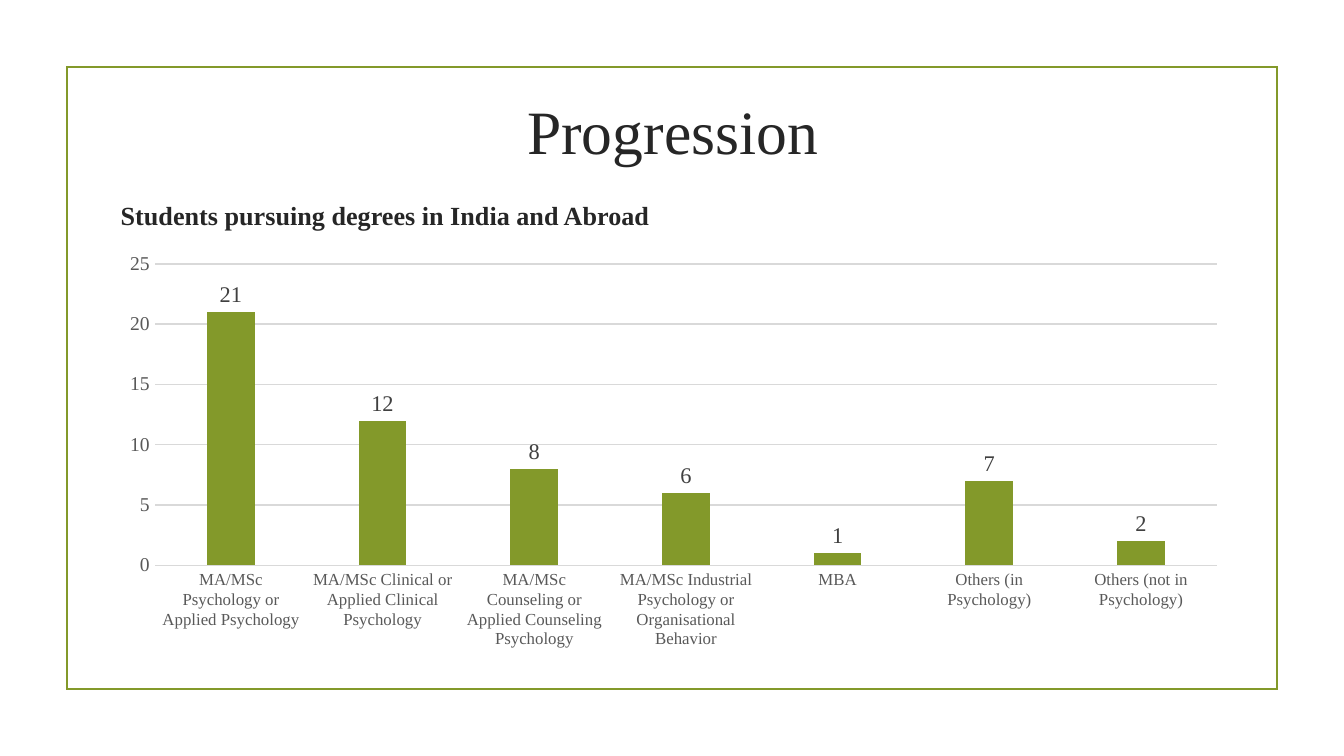
from dataclasses import dataclass

from lxml.etree import SubElement as Sub
from pptx import Presentation
from pptx.chart.data import CategoryChartData as Data
from pptx.dml.color import RGBColor as Rgb
from pptx.enum.chart import XL_CHART_TYPE as Kind, XL_LABEL_POSITION as Spot, XL_TICK_MARK as Tick
from pptx.enum.shapes import MSO_SHAPE as Form
from pptx.enum.text import MSO_ANCHOR as Anchor, PP_ALIGN as Align
from pptx.oxml.ns import qn
from pptx.util import Inches, Pt

COLS, ROWS = 100, 56.25
CELL = Inches(0.1)
FACE = "Times New Roman"
GREEN, INK, GRAY, RULE = "83992A", "262626", "595959", "D9D9D9"
COUNTS = {
    "MA/MSc Psychology or Applied Psychology": 21,
    "MA/MSc Clinical or Applied Clinical Psychology": 12,
    "MA/MSc Counseling or Applied Counseling Psychology": 8,
    "MA/MSc Industrial Psychology or Organisational Behavior": 6,
    "MBA": 1,
    "Others (in Psychology)": 7,
    "Others (not in Psychology)": 2,
}


@dataclass
class Box:
    col: float
    row: float
    wide: float
    high: float

    def area(self) -> list[int]:
        return [round(n * CELL) for n in (self.col, self.row, self.wide, self.high)]


@dataclass
class Label:
    text: str
    box: Box
    size: float
    bold: bool
    align: Align


LABELS = [
    Label("Progression", Box(5, 5.9, 90.1, 6.9), 33, False, Align.CENTER),
    Label("Students pursuing degrees in India and Abroad",
          Box(8, 13.85, 84.3, 4.4), 14, True, Align.LEFT),
]


def paint(part, tone: str) -> None:
    part.solid()
    part.fore_color.rgb = Rgb.from_string(tone)


def style(font, size: float, tone: str, bold: bool = False) -> None:
    font.name, font.size, font.bold = FACE, Pt(size), bold
    paint(font.fill, tone)


def rule(line, tone: str, width: float) -> None:
    paint(line.fill, tone)
    line.width = Pt(width)


def add_frame(slide, box: Box) -> None:
    frame = slide.shapes.add_shape(Form.RECTANGLE, *box.area())
    frame.shadow.inherit = False
    frame.fill.background()
    rule(frame.line, GREEN, 1.25)
    edge = frame.element.spPr.find(qn("a:ln"))
    Sub(edge, qn("a:miter"), lim="800000")


def add_label(slide, label: Label) -> None:
    text = slide.shapes.add_textbox(*label.box.area()).text_frame
    text.word_wrap = True
    text.vertical_anchor = Anchor.TOP
    text.margin_left = text.margin_right = text.margin_top = text.margin_bottom = CELL
    text.text = label.text
    line = text.paragraphs[0]
    line.alignment = label.align
    style(line.runs[0].font, label.size, INK, label.bold)


def add_bars(slide, box: Box) -> None:
    data = Data()
    data.categories = list(COUNTS)
    data.add_series("Series 1", list(COUNTS.values()))
    chart = slide.shapes.add_chart(Kind.COLUMN_CLUSTERED, *box.area(), data).chart
    chart.has_title = chart.has_legend = False
    style(chart.font, 10, "000000")

    for axis, size in ((chart.category_axis, 9), (chart.value_axis, 10.5)):
        axis.major_tick_mark = axis.minor_tick_mark = Tick.NONE
        style(axis.tick_labels.font, size, GRAY)
    rule(chart.category_axis.format.line, RULE, 0.75)
    chart.value_axis.format.line.fill.background()
    rule(chart.value_axis.major_gridlines.format.line, RULE, 0.75)

    plot = chart.plots[0]
    plot.gap_width, plot.overlap = 219, -27
    plot.vary_by_categories = False
    bars = plot.series[0]
    paint(bars.format.fill, GREEN)
    tags = bars.data_labels
    tags.show_value = True
    tags.position = Spot.OUTSIDE_END
    style(tags.font, 12, "404040")


def main() -> None:
    deck = Presentation()
    deck.slide_width, deck.slide_height = round(COLS * CELL), round(ROWS * CELL)
    slide = deck.slides.add_slide(deck.slide_layouts[6])
    add_frame(slide, Box(5, 5, 90, 46.3))
    for label in LABELS:
        add_label(slide, label)
    add_bars(slide, Box(8, 18.24, 84.22, 30.66))
    deck.save("out.pptx")


if __name__ == "__main__":
    main()
